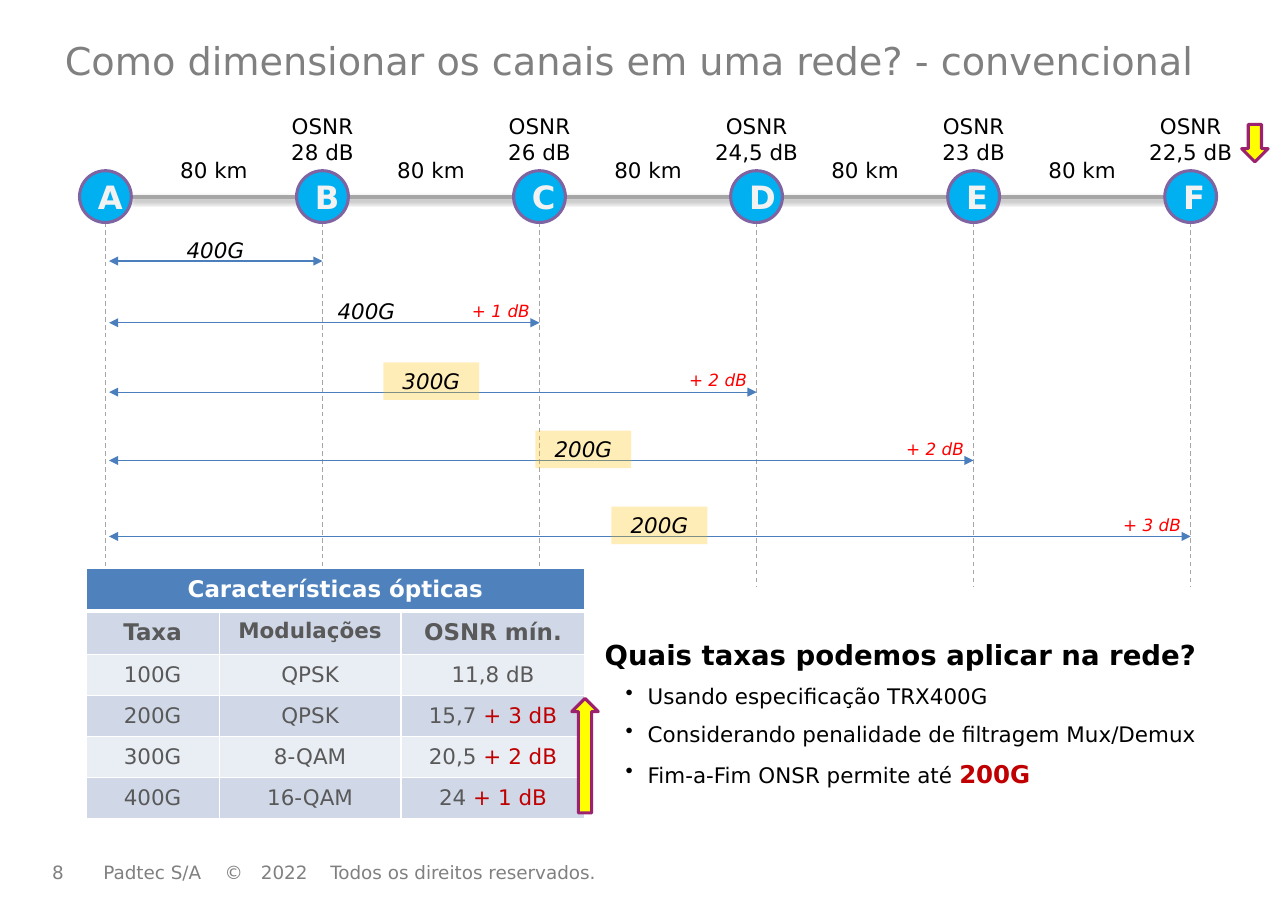
import lxml.etree
import pptx
import pptx.dml.color
import pptx.enum.dml
import pptx.enum.shapes
import pptx.enum.text
import pptx.oxml.ns
import pptx.util

Pt = pptx.util.Pt
SHAPE = pptx.enum.shapes.MSO_SHAPE
ALIGN = pptx.enum.text.PP_ALIGN
ANCHOR = pptx.enum.text.MSO_ANCHOR

COLORS = {
    "black": "000000", "white": "FFFFFF", "gray": "808080", "rule": "A6A6A6",
    "node": "00B0F0", "node_edge": "8064A2", "letter": "F2F2F2",
    "span": "4B7EBC", "reduced": "FFC000", "penalty": "FF0000",
    "accent": "C00000", "arrow": "FFFF00", "arrow_edge": "9C2270",
    "header": "4F81BD", "band_dark": "D0D8E8", "band_light": "E9EDF4", "cell": "595959",
}


def add_xml(parent, tag, **attributes):
    return lxml.etree.SubElement(parent, pptx.oxml.ns.qn(tag), attributes)


class Board:
    """Draws on one slide; lengths are cells of a 0.1 inch grid."""

    font_name = "DejaVu Sans"

    def __init__(self, deck):
        self.slide = deck.slides.add_slide(deck.slide_layouts[6])

    @staticmethod
    def grid(*cells):
        return [pptx.util.Inches(cell / 10) for cell in cells]

    @staticmethod
    def rgb(color):
        return pptx.dml.color.RGBColor.from_string(COLORS[color])

    def paint(self, fill, color):
        fill.solid()
        fill.fore_color.rgb = self.rgb(color)

    def add_runs(self, paragraph, runs, align=ALIGN.LEFT, color="black", **style):
        """Add runs, each a string or a (string, style overrides) pair."""
        paragraph.alignment = align
        for run in [runs] if isinstance(runs, str) else runs:
            words, changes = (run, {}) if isinstance(run, str) else run
            looks = {"name": self.font_name, "color": color, **style, **changes}
            piece = paragraph.add_run()
            piece.text = words
            piece.font.color.rgb = self.rgb(looks.pop("color"))
            for name, value in looks.items():
                setattr(piece.font, name, value)

    def text(self, box, runs, anchor=ANCHOR.TOP, **style):
        frame = self.slide.shapes.add_textbox(*self.grid(*box)).text_frame
        frame.word_wrap = True
        frame.vertical_anchor = anchor
        self.add_runs(frame.paragraphs[0], runs, **style)
        return frame

    def shape(self, kind, box, fill, edge=None, alpha=None):
        shape = self.slide.shapes.add_shape(kind, *self.grid(*box))
        shape.shadow.inherit = False
        self.paint(shape.fill, fill)
        if alpha:
            solid = shape.element.spPr.find(pptx.oxml.ns.qn("a:solidFill"))
            add_xml(solid[0], "a:alpha", val=str(alpha * 1000))
        if edge:
            shape.line.color.rgb = self.rgb(edge)
            shape.line.width = Pt(2)
        else:
            shape.line.fill.background()
        return shape

    def line(self, start, end, color, width=0.75, dashed=False, arrows=False, shadow=False):
        line = self.slide.shapes.add_connector(
            pptx.enum.shapes.MSO_CONNECTOR.STRAIGHT, *self.grid(*start, *end))
        line.line.color.rgb = self.rgb(color)
        line.line.width = Pt(width)
        if dashed:
            line.line.dash_style = pptx.enum.dml.MSO_LINE.DASH
        properties = line.element.spPr
        if arrows:
            outline = properties.find(pptx.oxml.ns.qn("a:ln"))
            for tag in ("a:headEnd", "a:tailEnd"):
                add_xml(outline, tag, type="triangle")
        effects = add_xml(properties, "a:effectLst")
        if shadow:
            cast = add_xml(effects, "a:outerShdw", blurRad=str(Pt(3.1)),
                           dist=str(Pt(1.8)), dir="5400000", rotWithShape="0")
            add_xml(add_xml(cast, "a:srgbClr", val=COLORS["black"]), "a:alpha", val="35000")

    def cell(self, cell, runs, fill, bottom=1, anchor=ANCHOR.MIDDLE, **style):
        margins = {"margin_left": 1.3, "margin_right": 1.3, "margin_top": 0.7, "margin_bottom": 0.7}
        for name, value in margins.items():
            setattr(cell, name, self.grid(value)[0])
        cell.vertical_anchor = anchor
        for side, width in {"L": 1, "R": 1, "T": 1, "B": bottom}.items():
            border = add_xml(cell._tc.get_or_add_tcPr(), f"a:ln{side}", w=str(Pt(width)))
            add_xml(add_xml(border, "a:solidFill"), "a:srgbClr", val=COLORS["white"])
        self.paint(cell.fill, fill)
        self.add_runs(cell.text_frame.paragraphs[0], runs, align=ALIGN.CENTER, **style)

    def table(self, box, widths, heights):
        table = self.slide.shapes.add_table(len(heights), len(widths), *self.grid(*box)).table
        for column, width in zip(table.columns, self.grid(*widths)):
            column.width = width
        for row, height in zip(table.rows, self.grid(*heights)):
            row.height = height
        return table


NODES = "ABCDEF"
OSNR = ["28", "26", "24,5", "23", "22,5"]
# end node, row, label centre, rate, penalty
CHANNELS = [
    ("B", 23.7, 19.55, "400G", None),
    ("C", 29.3, 33.25, "400G", "+ 1 dB"),
    ("D", 35.6, 39.15, "300G", "+ 2 dB"),
    ("E", 41.8, 52.95, "200G", "+ 2 dB"),
    ("F", 48.7, 59.85, "200G", "+ 3 dB"),
]
RATES = [
    ("100G", "QPSK", "11,8 dB", None),
    ("200G", "QPSK", "15,7 ", "+ 3 dB"),
    ("300G", "8-QAM", "20,5 ", "+ 2 dB"),
    ("400G", "16-QAM", "24 ", "+ 1 dB"),
]
PITCH, NODE_SIZE, LABEL = 19.7, 4.7, 8.7
CENTERS = {node: 9.57 + PITCH * index for index, node in enumerate(NODES)}


def draw_frame(board):
    gray = {"color": "gray", "size": Pt(12)}
    board.text((1.7, 77.6, 7.1, 3.1), "8", ANCHOR.MIDDLE, align=ALIGN.CENTER, **gray)
    credit = board.text((8.4, 77.7, 82.3, 3),
                        "Padtec S/A\t©\t2022\tTodos os direitos reservados.", **gray)
    stops = add_xml(credit.paragraphs[0]._p.get_or_add_pPr(), "a:tabLst")
    for stop in board.grid(11, 14.3, 20.6):
        add_xml(stops, "a:tab", pos=str(stop), algn="l")
    board.text((4.9, 2.2, 105.2, 6.5), "Como dimensionar os canais em uma rede? - convencional",
               ANCHOR.MIDDLE, color="gray", size=Pt(25))


def draw_network(board):
    label = {"align": ALIGN.CENTER, "size": Pt(14)}
    for center in CENTERS.values():
        board.line((center, 20.2), (center, 53.3), "rule", dashed=True)
    reach = NODE_SIZE / 2
    board.line((CENTERS["A"] + reach, 17.9), (CENTERS["F"] - reach, 17.9), "rule", 3, shadow=True)
    for node, center in CENTERS.items():
        circle = board.shape(SHAPE.OVAL, (center - reach, 15.5, NODE_SIZE, NODE_SIZE),
                             "node", "node_edge")
        board.add_runs(circle.text_frame.paragraphs[0], node, ALIGN.CENTER, "letter",
                       size=Pt(21), bold=True)
    for level, center in zip(OSNR, list(CENTERS.values())[1:]):
        board.text((center - (PITCH + LABEL) / 2, 13.8, LABEL, 3.4), "80 km", **label)
        width = 11 if "," in level else LABEL
        board.text((center - width / 2, 9.8, width, 5.7), f"OSNR {level} dB", **label)


def draw_channels(board):
    rate_style = {"align": ALIGN.CENTER, "size": Pt(14), "italic": True}
    for node, row, center, rate, penalty in CHANNELS:
        board.line((9.9, row), (CENTERS[node], row), "span", arrows=True)
        box = (center - LABEL / 2, row - 2.7, LABEL, 3.4)
        if rate == "400G":
            board.text(box, rate, **rate_style)
        else:
            frame = board.shape(SHAPE.RECTANGLE, box, "reduced", alpha=28).text_frame
            frame.vertical_anchor = ANCHOR.TOP
            board.add_runs(frame.paragraphs[0], rate, **rate_style)
        if penalty:
            board.text((CENTERS[node] - 7.85, row - 2.5, LABEL, 2.9), penalty,
                       align=ALIGN.CENTER, color="penalty", size=Pt(11), italic=True)


def draw_optics(board):
    table = board.table((7.8, 51.6, 45.3, 22.3), (12.1, 16.5, 16.7), [3.8] * 2 + [3.7] * 4)
    table.cell(0, 0).merge(table.cell(0, 2))
    top = {"anchor": ANCHOR.TOP, "bold": True}
    board.cell(table.cell(0, 0), "Características ópticas", "header", 3,
               color="white", size=Pt(15), **top)
    for column, (heading, size) in enumerate([("Taxa", 15), ("Modulações", 14), ("OSNR mín.", 15)]):
        board.cell(table.cell(1, column), heading, "band_dark", color="cell", size=Pt(size), **top)
    for row, (rate, modulation, minimum, penalty) in enumerate(RATES, 2):
        needed = [minimum, (penalty, {"color": "accent"})] if penalty else minimum
        for column, runs in enumerate((rate, modulation, needed)):
            board.cell(table.cell(row, column), runs, "band_dark" if row % 2 else "band_light",
                       color="cell", size=Pt(14), bold=False)


def draw_conclusion(board):
    frame = board.text((53.9, 57.4, 60.5, 14.8), "Quais taxas podemos aplicar na rede?",
                       size=Pt(18), bold=True)
    answer = ("200G", {"size": Pt(16), "color": "accent", "bold": True})
    margin, hang = board.grid(3.9, -2)
    for point in ("Usando especificação TRX400G",
                  "Considerando penalidade de filtragem Mux/Demux",
                  ["Fim-a-Fim ONSR permite até ", answer]):
        paragraph = frame.add_paragraph()
        paragraph.level = 1
        paragraph.space_before = Pt(8)
        properties = paragraph._p.get_or_add_pPr()
        properties.set("marL", str(margin))
        properties.set("indent", str(hang))
        add_xml(properties, "a:buChar", char="•")
        board.add_runs(paragraph, point, size=Pt(14), bold=False)


def main():
    deck = pptx.Presentation()
    deck.slide_width, deck.slide_height = Board.grid(116.9, 82.7)
    board = Board(deck)
    for draw in (draw_frame, draw_network, draw_channels, draw_optics, draw_conclusion):
        draw(board)
    board.shape(SHAPE.DOWN_ARROW, (112.7, 11.3, 2.4, 3.4), "arrow", "arrow_edge")
    rising = board.shape(SHAPE.DOWN_ARROW, (51.9, 63.4, 2.4, 10.4), "arrow", "arrow_edge")
    rising.rotation = 180
    deck.save("out.pptx")


if __name__ == "__main__":
    main()
